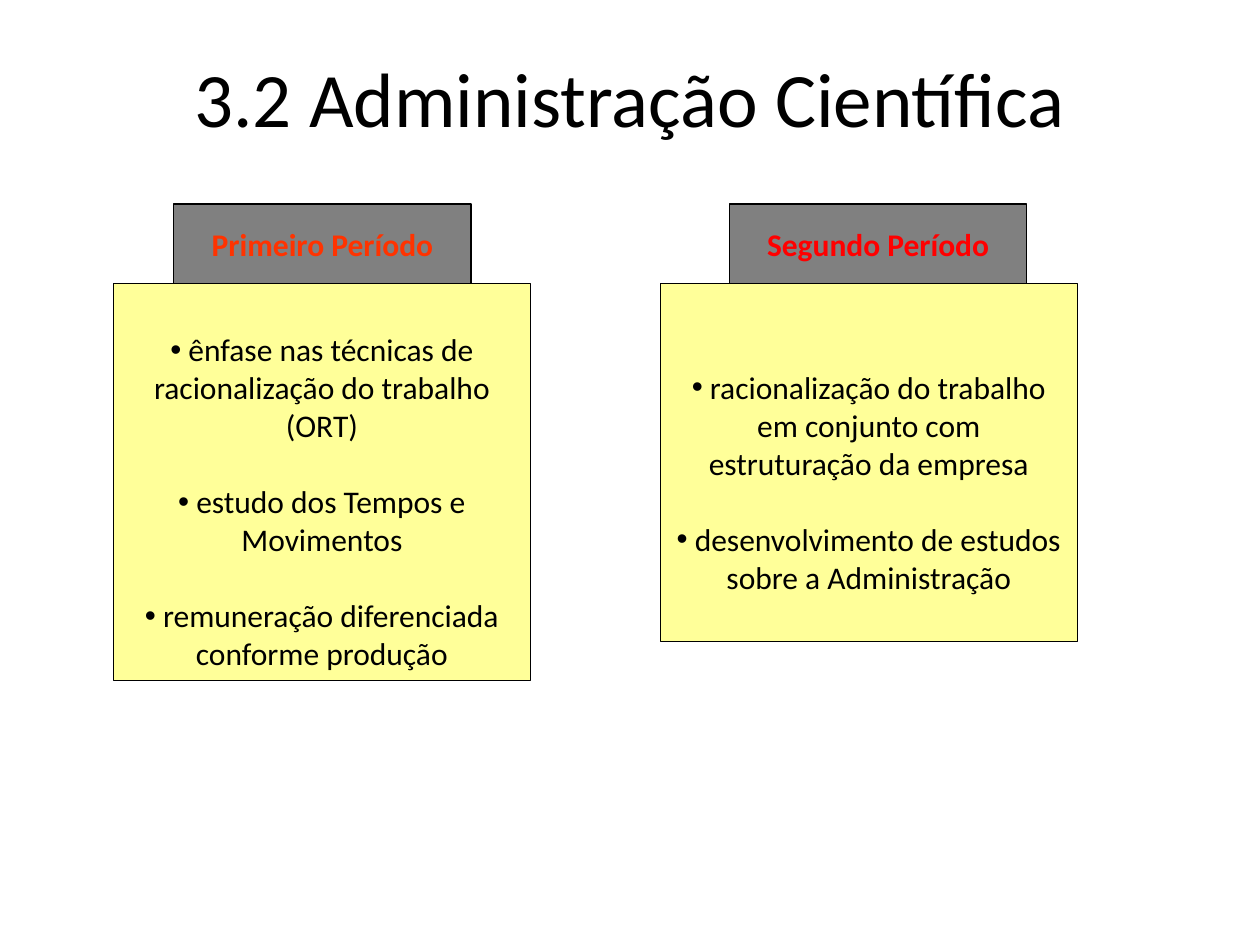
from lxml import etree
from pptx import Presentation
from pptx.dml.color import RGBColor
from pptx.enum.shapes import MSO_SHAPE
from pptx.enum.text import MSO_ANCHOR, PP_ALIGN
from pptx.oxml.ns import qn
from pptx.util import Inches, Pt

RECT = MSO_SHAPE.RECTANGLE
MIDDLE = MSO_ANCHOR.MIDDLE
CENTER = PP_ALIGN.CENTER
BLACK = RGBColor(0x00, 0x00, 0x00)
GRAY = RGBColor(0x80, 0x80, 0x80)
YELLOW = RGBColor(0xFF, 0xFF, 0x99)
ORANGE = RGBColor(0xFF, 0x33, 0x00)
RED = RGBColor(0xFF, 0x00, 0x00)


class Deck:
    font = "Calibri"
    size = 18
    gap = Pt(22)

    def __init__(self, slide):
        self.slide = slide

    def style(self, para, text, size, color, bold=False):
        para.text = text
        para.alignment = CENTER
        para.font.name = self.font
        para.font.size = Pt(size)
        para.font.color.rgb = color
        para.font.bold = bold

    def title(self, text):
        shape = self.slide.shapes.title
        shape.left, shape.top = Inches(0.5), Inches(0.3)
        shape.width, shape.height = Inches(9), Inches(0.93)
        shape.text_frame.vertical_anchor = MIDDLE
        self.style(shape.text_frame.paragraphs[0], text, 44, BLACK)

    def box(self, left, top, width, height, fill):
        shape = self.slide.shapes.add_shape(
            RECT, Inches(left), Inches(top), Inches(width), Inches(height))
        shape.shadow.inherit = False
        shape.fill.solid()
        shape.fill.fore_color.rgb = fill
        shape.line.color.rgb = BLACK
        shape.line.width = Pt(0.75)
        shape.text_frame.vertical_anchor = MIDDLE
        return shape.text_frame

    def header(self, left, text, color):
        frame = self.box(left, 1.62, 2.36, 0.63, GRAY)
        frame.word_wrap = False
        self.style(frame.paragraphs[0], text, self.size, color, True)

    def bullet(self, para):
        props = para._p.get_or_add_pPr()
        props.set("marL", "0")
        props.set("indent", "0")
        face = etree.SubElement(props, qn("a:buFont"))
        face.set("typeface", "Arial")
        mark = etree.SubElement(props, qn("a:buChar"))
        mark.set("char", "•")
        props.append(props.find(qn("a:defRPr")))

    def points(self, left, height, items):
        frame = self.box(left, 2.25, 3.31, height, YELLOW)
        frame.word_wrap = True
        frame.margin_top = Inches(0.05) + self.gap
        for i, item in enumerate(items):
            para = frame.add_paragraph() if i else frame.paragraphs[0]
            self.style(para, " " + item, self.size, BLACK)
            if i:
                para.space_before = self.gap
            self.bullet(para)


def main():
    prs = Presentation()
    prs.slide_width, prs.slide_height = Inches(10), Inches(7.5)
    deck = Deck(prs.slides.add_slide(prs.slide_layouts[5]))
    deck.title("3.2 Administração Científica")
    deck.header(1.38, "Primeiro Período", ORANGE)
    deck.header(5.79, "Segundo Período", RED)
    deck.points(0.9, 3.15, [
        "ênfase nas técnicas de racionalização do trabalho (ORT)",
        "estudo dos Tempos e Movimentos",
        "remuneração diferenciada conforme produção",
    ])
    deck.points(5.24, 2.84, [
        "racionalização do trabalho em conjunto com estruturação da empresa",
        "desenvolvimento de estudos sobre a Administração",
    ])
    prs.save("out.pptx")


if __name__ == "__main__":
    main()
